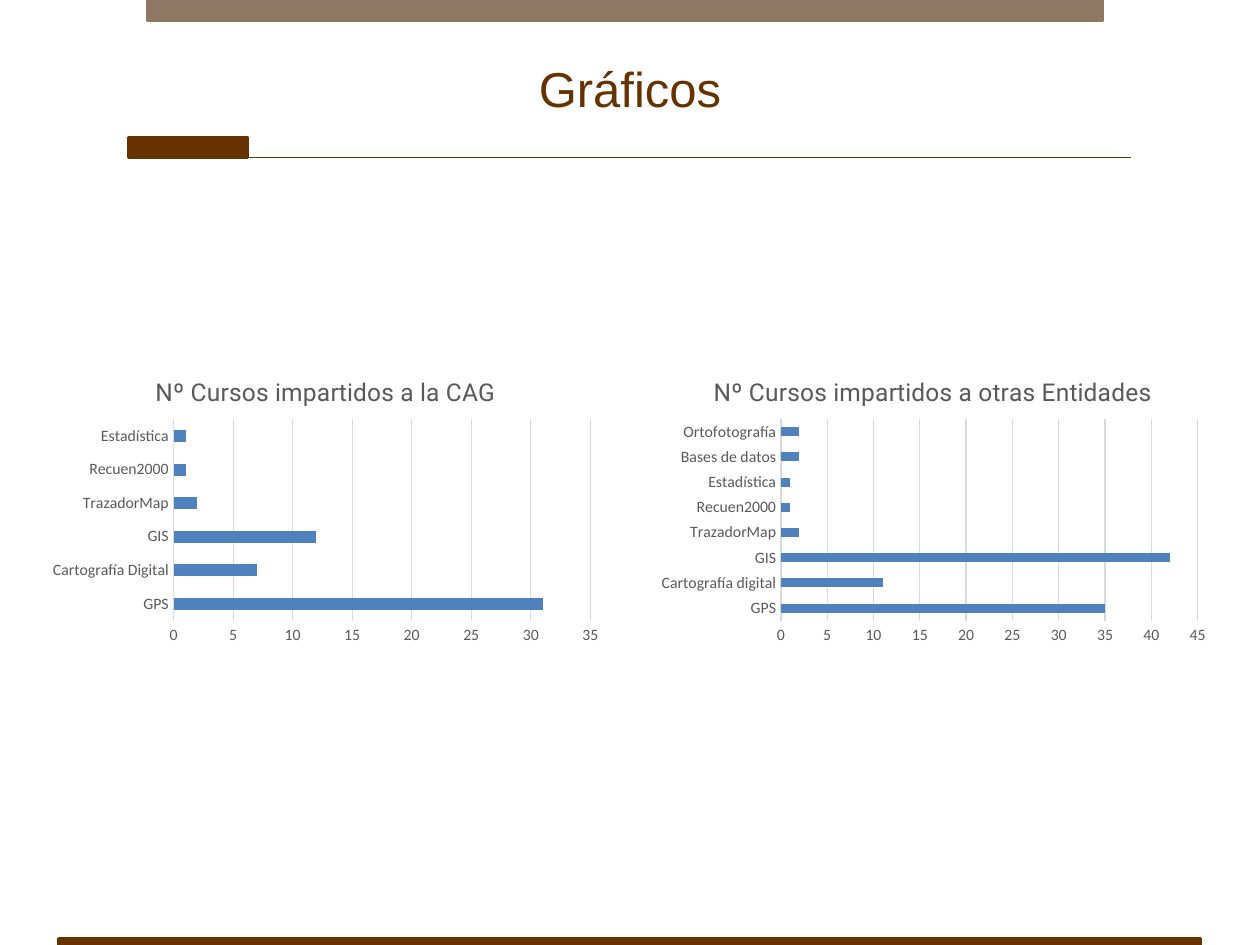
import pptx
import pptx.chart.data
import pptx.dml.color
import pptx.enum.chart
import pptx.enum.shapes
import pptx.enum.text
import pptx.oxml
import pptx.oxml.ns
import pptx.util

COLORS = {"brown": "663300", "taupe": "8E7863", "bar": "4F81BD",
          "label": "595959", "grid": "D9D9D9", "chart_text": "000000"}
COLUMNS, ROWS = 100, 75
PLOT_AREA = {"x": 0.23, "y": 0.21, "w": 0.74, "h": 0.69}


def rgb(name):
    return pptx.dml.color.RGBColor.from_string(COLORS[name])


def set_font(font, size, color, name):
    font.size = pptx.util.Pt(size)
    font.name = name
    font.bold = False
    font.color.rgb = rgb(color)


def write(tf, text, size=10, color="label", font="Calibri", align=None):
    tf.text = text
    p = tf.paragraphs[0]
    p.alignment = align
    set_font(p.runs[0].font, size, color, font)


def set_line(line, color, width=0.75):
    line.color.rgb = rgb(color)
    line.width = pptx.util.Pt(width)


def fix_plot_area(chart):
    """Give the inner plot area its place as shares of the chart."""
    area = chart._chartSpace.chart.plotArea
    for old in area.findall(pptx.oxml.ns.qn("c:layout")):
        area.remove(old)
    shares = "".join(f'<c:{k} val="{v}"/>' for k, v in PLOT_AREA.items())
    area.insert(0, pptx.oxml.parse_xml(
        f'<c:layout {pptx.oxml.ns.nsdecls("c")}><c:manualLayout>'
        '<c:layoutTarget val="inner"/><c:xMode val="edge"/><c:yMode val="edge"/>'
        f'{shares}</c:manualLayout></c:layout>'))


class Deck:
    """Holds the style and current slide; lengths are grid columns and rows."""

    def __init__(self):
        self.prs = pptx.Presentation()
        self.prs.slide_width = pptx.util.Inches(10)
        self.prs.slide_height = pptx.util.Inches(7.5)
        self.s = self.prs.slides.add_slide(self.prs.slide_layouts[5])

    def box(self, x, y, w, h):
        col = self.prs.slide_width / COLUMNS
        row = self.prs.slide_height / ROWS
        return [round(v) for v in (x * col, y * row, w * col, h * row)]

    def title(self, text, *place):
        sp = self.s.shapes.title
        sp.left, sp.top, sp.width, sp.height = self.box(*place)
        tf = sp.text_frame
        tf.vertical_anchor = pptx.enum.text.MSO_ANCHOR.MIDDLE
        write(tf, text, size=28, color="brown", font="Arial",
              align=pptx.enum.text.PP_ALIGN.CENTER)

    def bar(self, color, *place):
        sp = self.s.shapes.add_shape(
            pptx.enum.shapes.MSO_SHAPE.RECTANGLE, *self.box(*place))
        sp.shadow.inherit = False
        sp.fill.solid()
        sp.fill.fore_color.rgb = rgb(color)
        set_line(sp.line, color, 2)

    def rule(self, color, x1, x2, y):
        left, top, right, _ = self.box(x1, y, x2, 0)
        line = self.s.shapes.add_connector(
            pptx.enum.shapes.MSO_CONNECTOR.STRAIGHT, left, top, right, top)
        set_line(line.line, color)
        line._element.spPr.append(pptx.oxml.parse_xml(
            f'<a:effectLst {pptx.oxml.ns.nsdecls("a")}/>'))

    def chart(self, title, values, top, *place):
        data = pptx.chart.data.CategoryChartData()
        data.categories = list(values)
        data.add_series("Series 1", list(values.values()))
        chart = self.s.shapes.add_chart(
            pptx.enum.chart.XL_CHART_TYPE.BAR_CLUSTERED,
            *self.box(*place), data).chart
        set_font(chart.font, 10, "chart_text", "Calibri")
        chart.has_legend = False
        chart.has_title = True
        write(chart.chart_title.text_frame, title, size=14, font="Roboto")
        chart.chart_title.include_in_layout = False

        plot = chart.plots[0]
        plot.gap_width = 182
        plot.vary_by_categories = False
        fill = plot.series[0].format.fill
        fill.solid()
        fill.fore_color.rgb = rgb("bar")

        for axis in (chart.category_axis, chart.value_axis):
            axis.major_tick_mark = pptx.enum.chart.XL_TICK_MARK.NONE
            axis.minor_tick_mark = pptx.enum.chart.XL_TICK_MARK.NONE
            set_font(axis.tick_labels.font, 9, "label", "Calibri")
        set_line(chart.category_axis.format.line, "grid")
        axis = chart.value_axis
        axis.format.line.fill.background()
        axis.minimum_scale, axis.maximum_scale, axis.major_unit = 0, top, 5
        axis.has_major_gridlines = True
        set_line(axis.major_gridlines.format.line, "grid")
        fix_plot_area(chart)


def main():
    deck = Deck()
    deck.bar("brown", 4.7, 74.5, 90.6, 0.5)
    deck.bar("taupe", 11.7, 0, 75.8, 1.6)
    deck.rule("brown", 10.2, 89.8, 12.5)
    deck.bar("brown", 10.2, 10.9, 9.4, 1.6)
    deck.title("Gráficos", 5, 3, 90, 7.9)

    charts = [
        ("Nº Cursos impartidos a la CAG", 35,
         {"GPS": 31, "Cartografía Digital": 7, "GIS": 12, "TrazadorMap": 2,
          "Recuen2000": 1, "Estadística": 1}),
        ("Nº Cursos impartidos a otras Entidades", 45,
         {"GPS": 35, "Cartografía digital": 11, "GIS": 42, "TrazadorMap": 2,
          "Recuen2000": 1, "Estadística": 1, "Bases de datos": 2,
          "Ortofotografía": 2}),
    ]
    for i, (title, top, values) in enumerate(charts):
        deck.chart(title, values, top, 3.5 + 48.2 * i, 28.4, 44.7, 23.2)
    deck.prs.save("out.pptx")


if __name__ == "__main__":
    main()
